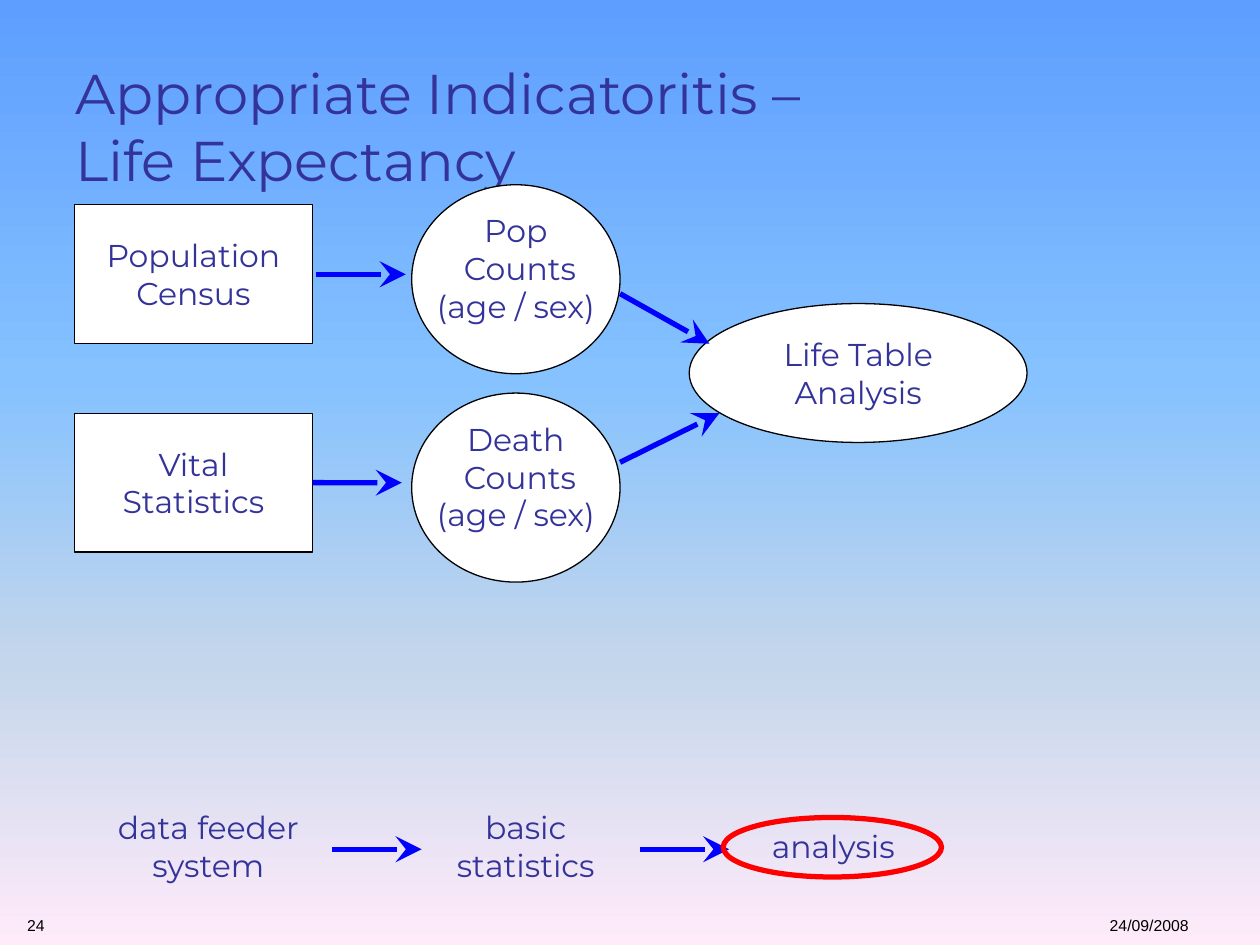
"""Build the Life Expectancy indicator flow slide."""
from lxml.etree import SubElement
from pptx import Presentation
from pptx.dml.color import RGBColor
from pptx.enum.shapes import MSO_CONNECTOR, MSO_SHAPE
from pptx.enum.text import MSO_ANCHOR, MSO_AUTO_SIZE, PP_ALIGN
from pptx.oxml.ns import qn
from pptx.util import Cm, Pt

COLORS = {"ink": "333399", "footer": "000000", "paper": "FFFFFF", "outline": "000000",
          "arrow": "0000FF", "highlight": "FF0000"}
SKY = [(0, "5E9EFF"), (40, "85C2FF"), (70, "C4D6EB"), (100, "FFEBFA")]

TITLE = "Appropriate Indicatoritis – Life Expectancy"
DATE, NUMBER = "24/09/2008", "24"
ROWS = [("Population Census", "Pop\n Counts\n(age / sex)"),
        ("Vital Statistics", "Death\n Counts\n(age / sex)")]
ANALYSIS = "Life Table Analysis"
STAGES = [("data feeder system", 2, 4.2), ("basic statistics", 2, 10.6), ("analysis", 1, 16.8)]

ROW_MIDDLES = [5.53, 9.73]
SOURCE_X, SOURCE_SIZE = 3.9, (4.8, 2.8)
COUNTS_X, COUNTS_SIZE = 10.4, (4.2, 3.81)
ANALYSIS_CENTER, ANALYSIS_SIZE = (17.3, 7.52), (6.81, 2.8)
STAGE_Y, LABEL_WIDTH = 17.05, 4.6
ARROWS = [((6.38, 5.53), (8.18, 5.53)), ((12.5, 9.32), (14.5, 8.33)),
          ((12.5, 5.92), (14.3, 6.93)), ((6.7, 17.12), (8.5, 17.12)),
          ((12.9, 17.12), (14.7, 17.12))]


def rgb(name):
    return RGBColor.from_string(COLORS[name])


def add_text(parent, text, left, top, width, height, size, font="Montserrat",
             color="ink", align=PP_ALIGN.CENTER):
    box = parent.add_textbox(Cm(left), Cm(top), Cm(width), Cm(height))
    frame = box.text_frame
    frame.word_wrap = True
    frame.text = text
    for paragraph in frame.paragraphs:
        paragraph.alignment = align
        for run in paragraph.runs:
            run.font.name, run.font.size = font, Pt(size)
            run.font.color.rgb = rgb(color)
    return frame


def add_label(parent, text, lines, center, width):
    height = 0.25 + 0.765 * lines
    frame = add_text(parent, text, center[0] - width / 2, center[1] - height / 2,
                     width, height, 18)
    frame.auto_size = MSO_AUTO_SIZE.SHAPE_TO_FIT_TEXT


def add_outline(parent, kind, center, size, color="outline", weight=0.75, filled=True):
    outline = parent.add_shape(kind, Cm(center[0] - size[0] / 2), Cm(center[1] - size[1] / 2),
                               Cm(size[0]), Cm(size[1]))
    outline.shadow.inherit = False
    if filled:
        outline.fill.solid()
        outline.fill.fore_color.rgb = rgb("paper")
    else:
        outline.fill.background()
    outline.line.color.rgb = rgb(color)
    outline.line.width = Pt(weight)
    return outline


def add_node(shapes, kind, text, lines, center, size, label_width, lift=0):
    group = shapes.add_group_shape().shapes
    outline = add_outline(group, kind, center, size)
    add_label(group, text, lines, (center[0], center[1] - lift), label_width)
    return outline


def add_arrow(shapes, start, end):
    arrow = shapes.add_connector(MSO_CONNECTOR.STRAIGHT, *map(Cm, start + end))
    arrow.line.color.rgb = rgb("arrow")
    arrow.line.width = Pt(3)
    properties = arrow._element.spPr
    SubElement(properties.find(qn("a:ln")), qn("a:tailEnd"), type="stealth", w="lg", len="lg")
    SubElement(properties, qn("a:effectLst"))
    return arrow


def paint_sky(slide):
    fill = slide.background.fill
    fill.gradient()
    fill.gradient_angle = 270
    stops = slide.element.find(".//" + qn("a:gsLst"))
    stops.clear()
    for percent, color in SKY:
        stop = SubElement(stops, qn("a:gs"), pos=str(percent * 1000))
        SubElement(stop, qn("a:srgbClr"), val=color)


def main():
    deck = Presentation()
    deck.slide_width, deck.slide_height = Cm(25.4), Cm(19.05)
    slide = deck.slides.add_slide(deck.slide_layouts[6])
    shapes = slide.shapes
    paint_sky(slide)

    add_text(shapes, DATE, 18.29, 18.34, 5.92, 0.7, 9, "Arial", "footer", PP_ALIGN.RIGHT)
    add_text(shapes, NUMBER, 0.3, 18.34, 4.22, 0.6, 9, "Arial", "footer", PP_ALIGN.LEFT)
    title = add_text(shapes, TITLE, 1.27, 0.94, 16.03, 3.18, 32, align=PP_ALIGN.LEFT)
    title.vertical_anchor = MSO_ANCHOR.MIDDLE

    sources = []
    for (source, counts), middle in zip(ROWS, ROW_MIDDLES):
        sources.append(add_node(shapes, MSO_SHAPE.RECTANGLE, source, 2,
                                (SOURCE_X, middle), SOURCE_SIZE, 4.4))
        add_node(shapes, MSO_SHAPE.OVAL, counts, 3, (COUNTS_X, middle + 0.1),
                 COUNTS_SIZE, 4.2, lift=0.22)
    add_node(shapes, MSO_SHAPE.OVAL, ANALYSIS, 2, ANALYSIS_CENTER, ANALYSIS_SIZE, 6)

    for text, lines, center in STAGES:
        add_label(shapes, text, lines, (center, STAGE_Y), LABEL_WIDTH)
    for start, end in ARROWS:
        add_arrow(shapes, start, end)
    vital_arrow = add_arrow(shapes, (6.3, ROW_MIDDLES[1]), (8.1, ROW_MIDDLES[1]))
    vital_arrow.begin_connect(sources[1], 3)
    add_outline(shapes, MSO_SHAPE.OVAL, (STAGES[-1][2] - 0.02, STAGE_Y + 0.03), (4.4, 1.2),
                "highlight", 3, filled=False)

    deck.save("out.pptx")


if __name__ == "__main__":
    main()
